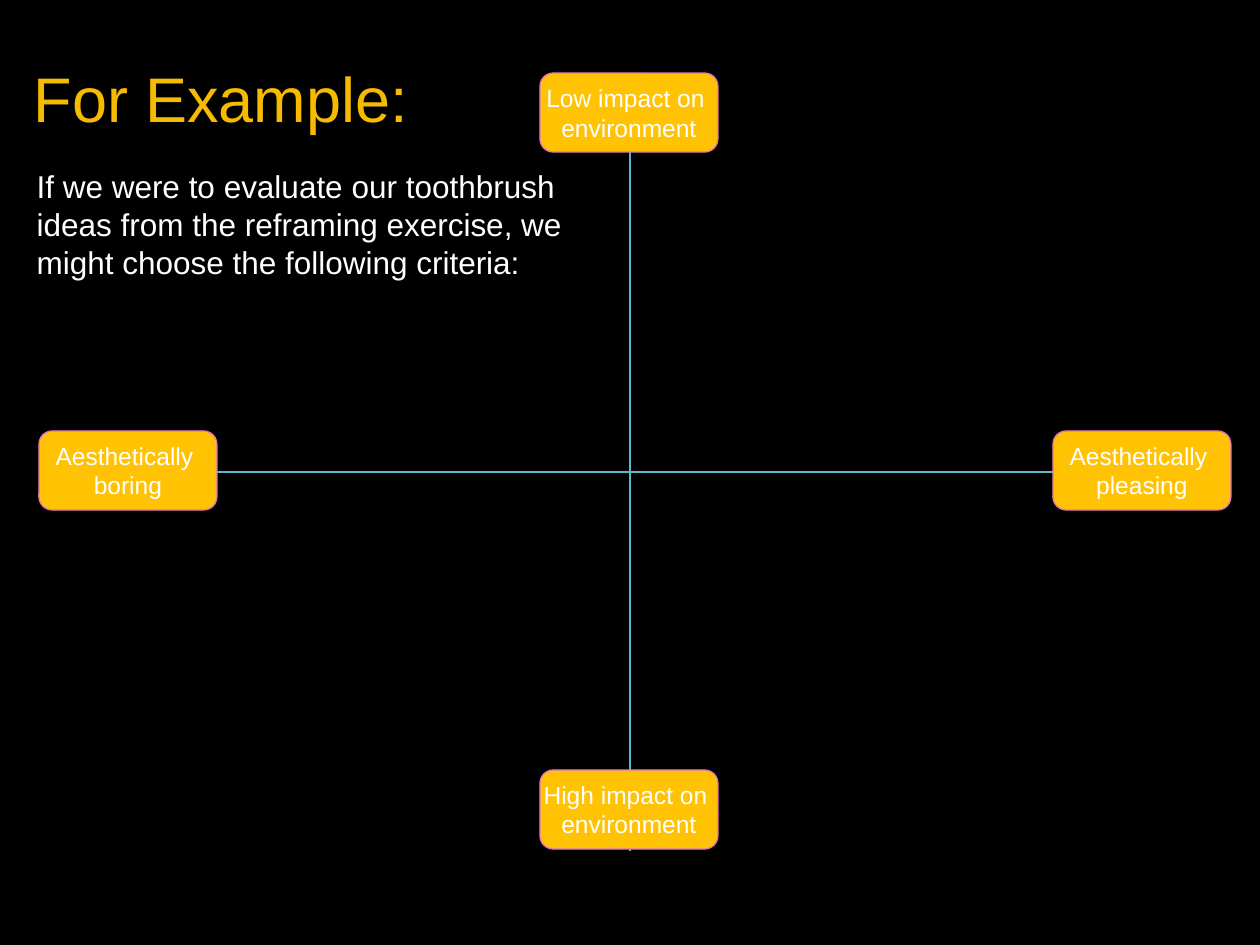
from dataclasses import dataclass

from lxml import etree
from pptx import Presentation
from pptx import util as u
from pptx.dml.color import RGBColor
from pptx.enum import shapes, text
from pptx.oxml import ns

PX_PER_INCH = 126


@dataclass(frozen=True)
class Theme:
    font: str = "Arial"
    background: str = "000000"
    heading: str = "F6BB00"
    body: str = "FFFFFF"
    axis: str = "5FB5CD"
    label_fill: str = "FFC304"
    label_edge: str = "E572BF"
    heading_pt: int = 36
    body_pt: int = 18
    label_pt: int = 14
    line_pt: float = 0.75


@dataclass(frozen=True)
class Axis:
    x1: int
    y1: int
    x2: int
    y2: int


@dataclass(frozen=True)
class Criterion:
    left: int
    top: int
    lines: tuple[str, str]


THEME = Theme()
LABEL_WIDTH, LABEL_HEIGHT = 178, 79
MIDDLE_LEFT, MIDDLE_TOP = 540, 431

AXES = (Axis(42, 472, 1228, 472), Axis(630, 73, 630, 851))
CRITERIA = (
    Criterion(39, MIDDLE_TOP, ("Aesthetically ", "boring")),
    Criterion(1053, MIDDLE_TOP, ("Aesthetically ", "pleasing")),
    Criterion(MIDDLE_LEFT, 770, ("High impact on ", "environment")),
    Criterion(MIDDLE_LEFT, 73, ("Low impact on ", "environment")),
)


def px(length: int) -> u.Emu:
    return u.Emu(round(length * u.Inches(1) / PX_PER_INCH))


def colour(value: str) -> RGBColor:
    return RGBColor.from_string(value)


def add_run(paragraph, words: str, size: int, ink: str) -> None:
    run = paragraph.add_run()
    run.text = words
    run.font.name = THEME.font
    run.font.size = u.Pt(size)
    run.font.color.rgb = colour(ink)


def fill_placeholder(holder, box: tuple[int, int, int, int], words: str, size: int, ink: str) -> None:
    holder.left, holder.top, holder.width, holder.height = map(px, box)
    frame = holder.text_frame
    frame.word_wrap = True
    frame.auto_size = text.MSO_AUTO_SIZE.NONE
    frame.vertical_anchor = text.MSO_ANCHOR.TOP
    paragraph = frame.paragraphs[0]
    properties = paragraph._p.get_or_add_pPr()
    properties.set("marL", "0")
    properties.set("indent", "0")
    etree.SubElement(properties, ns.qn("a:buNone"))
    paragraph.alignment = text.PP_ALIGN.LEFT
    paragraph.space_before = u.Pt(0)
    add_run(paragraph, words, size, ink)


def draw_axis(slide, axis: Axis) -> None:
    line = slide.shapes.add_connector(
        shapes.MSO_CONNECTOR.STRAIGHT, px(axis.x1), px(axis.y1), px(axis.x2), px(axis.y2)
    )
    line.line.color.rgb = colour(THEME.axis)
    line.line.width = u.Pt(THEME.line_pt)
    etree.SubElement(line._element.spPr, ns.qn("a:effectLst"))


def draw_criterion(slide, criterion: Criterion) -> None:
    label = slide.shapes.add_shape(
        shapes.MSO_SHAPE.ROUNDED_RECTANGLE,
        px(criterion.left), px(criterion.top), px(LABEL_WIDTH), px(LABEL_HEIGHT),
    )
    label.shadow.inherit = False
    label.fill.solid()
    label.fill.fore_color.rgb = colour(THEME.label_fill)
    label.line.color.rgb = colour(THEME.label_edge)
    label.line.width = u.Pt(THEME.line_pt)
    frame = label.text_frame
    frame.word_wrap = False
    frame.vertical_anchor = text.MSO_ANCHOR.MIDDLE
    for index, words in enumerate(criterion.lines):
        paragraph = frame.add_paragraph() if index else frame.paragraphs[0]
        paragraph.alignment = text.PP_ALIGN.CENTER
        add_run(paragraph, words, THEME.label_pt, THEME.body)


def main() -> None:
    deck = Presentation()
    deck.slide_width, deck.slide_height = px(1260), px(945)
    slide = deck.slides.add_slide(deck.slide_layouts[1])
    slide.background.fill.solid()
    slide.background.fill.fore_color.rgb = colour(THEME.background)

    heading, introduction = slide.placeholders
    fill_placeholder(heading, (21, 53, 1197, 140), "For Example:", THEME.heading_pt, THEME.heading)
    fill_placeholder(
        introduction,
        (24, 161, 606, 116),
        "If we were to evaluate our toothbrush ideas from the reframing exercise, "
        "we might choose the following criteria:",
        THEME.body_pt,
        THEME.body,
    )
    for axis in AXES:
        draw_axis(slide, axis)
    for criterion in CRITERIA:
        draw_criterion(slide, criterion)
    deck.save("out.pptx")


if __name__ == "__main__":
    main()
